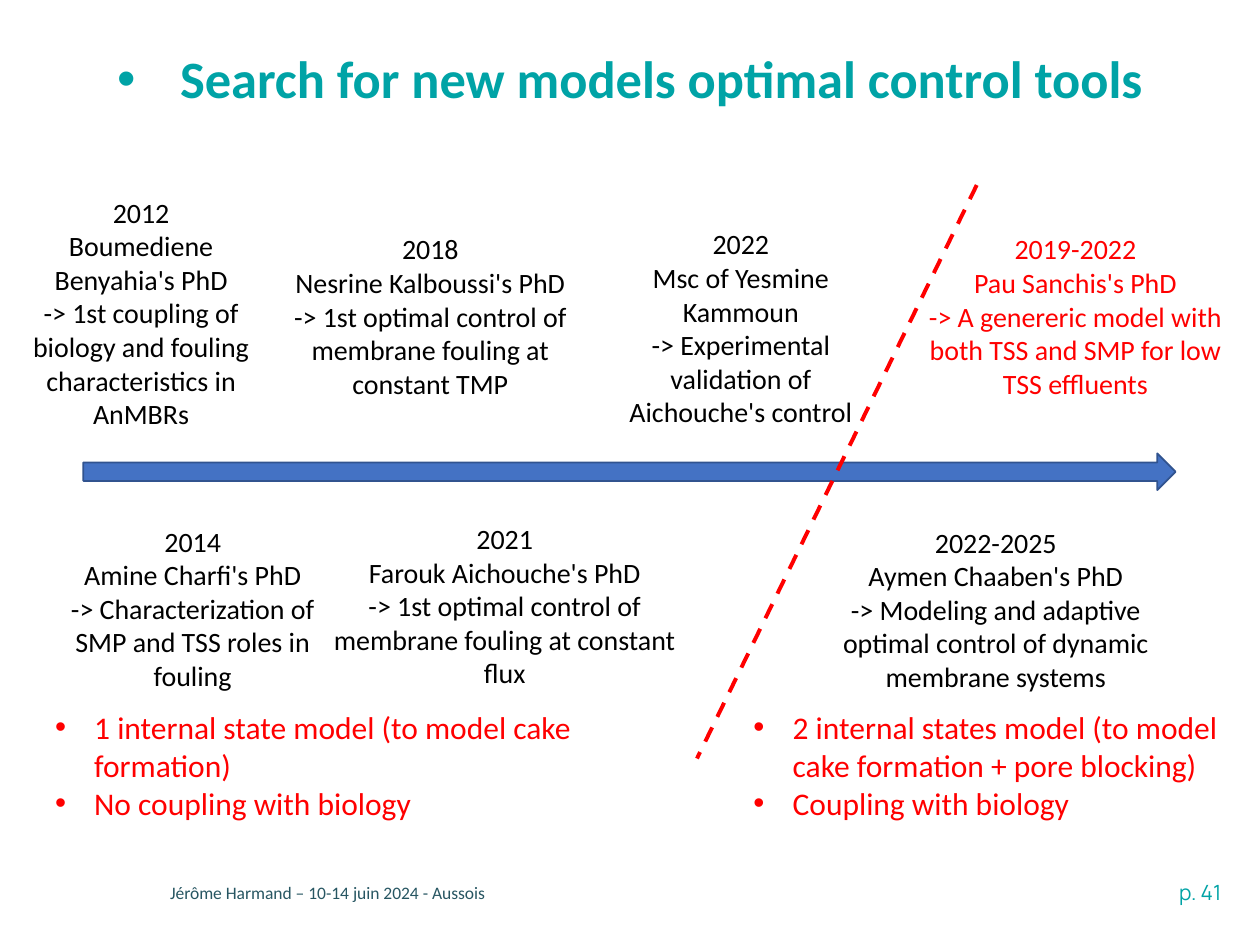
"""Build the timeline slide on models and optimal control tools."""
from lxml import etree
from pptx import Presentation
from pptx.dml.color import RGBColor
from pptx.enum import dml, shapes, text
from pptx.oxml import ns
from pptx.util import Cm, Pt

TEAL = RGBColor(0x00, 0xA3, 0xA6)
SLATE = RGBColor(0x27, 0x56, 0x62)
RED = RGBColor(0xFF, 0x00, 0x00)
BLACK = RGBColor(0x00, 0x00, 0x00)
BLUE = RGBColor(0x44, 0x72, 0xC4)
NAVY = RGBColor(0x31, 0x53, 0x8F)

TITLE = "Search for new models optimal control tools"
FOOTER = "Jérôme Harmand – 10-14 juin 2024 - Aussois"
PAGE = "p. 41"

MILESTONES = [
    ((0.23, 3.81, 5.23, 5.05), BLACK, "2012", "Boumediene Benyahia's PhD",
     "-> 1st coupling of biology and fouling characteristics in AnMBRs"),
    ((0.86, 10.44, 6.05, 3.68), BLACK, "2014", "Amine Charfi's PhD",
     "-> Characterization of SMP and TSS roles in fouling"),
    ((5.26, 4.55, 6.83, 3.68), BLACK, "2018", "Nesrine Kalboussi's PhD",
     "-> 1st optimal control of membrane fouling at constant TMP"),
    ((6.1, 10.39, 8.15, 3.68), BLACK, "2021", "Farouk Aichouche's PhD",
     "-> 1st optimal control of membrane fouling at constant flux"),
    ((12.09, 4.45, 5.69, 4.37), BLACK, "2022", "Msc of Yesmine Kammoun",
     "-> Experimental validation of Aichouche's control"),
    ((18.29, 4.55, 6.78, 3.68), RED, "2019-2022", "Pau Sanchis's PhD",
     "-> A genereric model with both TSS and SMP for low TSS effluents"),
    ((16, 10.46, 8.15, 3.68), BLACK, "2022-2025", "Aymen Chaaben's PhD",
     "-> Modeling and adaptive optimal control of dynamic membrane systems"),
]
SUMMARIES = [
    ((0.86, 14.15, 12.04, 2.57),
     ["1 internal state model (to model cake formation)", "No coupling with biology"]),
    ((14.94, 14.15, 10.11, 2.57),
     ["2 internal states model (to model cake formation + pore blocking)",
      "Coupling with biology"]),
]


def add_bullet(p, indent):
    pPr = p._p.get_or_add_pPr()
    pPr.set("marL", str(Cm(indent)))
    pPr.set("indent", str(-Cm(indent)))
    etree.SubElement(pPr, ns.qn("a:buFont")).set("typeface", "Arial")
    etree.SubElement(pPr, ns.qn("a:buChar")).set("char", "•")


def add_text(s, box, lines, color, size, align=text.PP_ALIGN.LEFT, indent=0,
             font="Calibri", bold=False):
    tf = s.shapes.add_textbox(*map(Cm, box)).text_frame
    tf.word_wrap = True
    formats = {"name": font, "size": Pt(size), "bold": bold}
    for i, line in enumerate(lines):
        p = tf.add_paragraph() if i else tf.paragraphs[0]
        p.alignment = align
        if indent:
            add_bullet(p, indent)
        r = p.add_run()
        r.text = line
        for name, value in formats.items():
            setattr(r.font, name, value)
        r.font.color.rgb = color
    return tf


def add_timeline(s):
    arrow = s.shapes.add_shape(shapes.MSO_SHAPE.RIGHT_ARROW,
                               *map(Cm, (1.68, 9.14, 22.02, 0.74)))
    arrow.shadow.inherit = False
    arrow.fill.solid()
    arrow.fill.fore_color.rgb = BLUE
    arrow.line.color.rgb = NAVY
    arrow.line.width = Pt(1)


def add_divider(s):
    line = s.shapes.add_connector(shapes.MSO_CONNECTOR.STRAIGHT,
                                  *map(Cm, (19.69, 3.73, 14.05, 15.29)))
    line.line.color.rgb = RED
    line.line.width = Pt(2.25)
    line.line.dash_style = dml.MSO_LINE.DASH
    etree.SubElement(line._element.spPr, ns.qn("a:effectLst"))


def main():
    prs = Presentation()
    prs.slide_width, prs.slide_height = Cm(25.4), Cm(19.05)
    s = prs.slides.add_slide(prs.slide_layouts[6])

    add_text(s, (19.08, 17.6, 5.79, 0.76), [PAGE], TEAL, 12,
             text.PP_ALIGN.RIGHT, font="Manrope")
    add_text(s, (3.18, 17.65, 18.64, 0.69), [FOOTER], SLATE, 10)
    tf = add_text(s, (2.36, 0.41, 21.29, 2.46), [TITLE], TEAL, 30, indent=1.27, bold=True)
    tf.margin_left = 0
    tf.vertical_anchor = text.MSO_ANCHOR.MIDDLE
    tf.paragraphs[0].line_spacing = 0.9

    add_timeline(s)
    for box, color, *lines in MILESTONES:
        add_text(s, box, lines, color, 16, text.PP_ALIGN.CENTER)
    add_divider(s)
    for box, lines in SUMMARIES:
        add_text(s, box, lines, RED, 18, indent=0.79)

    prs.save("out.pptx")


if __name__ == "__main__":
    main()
